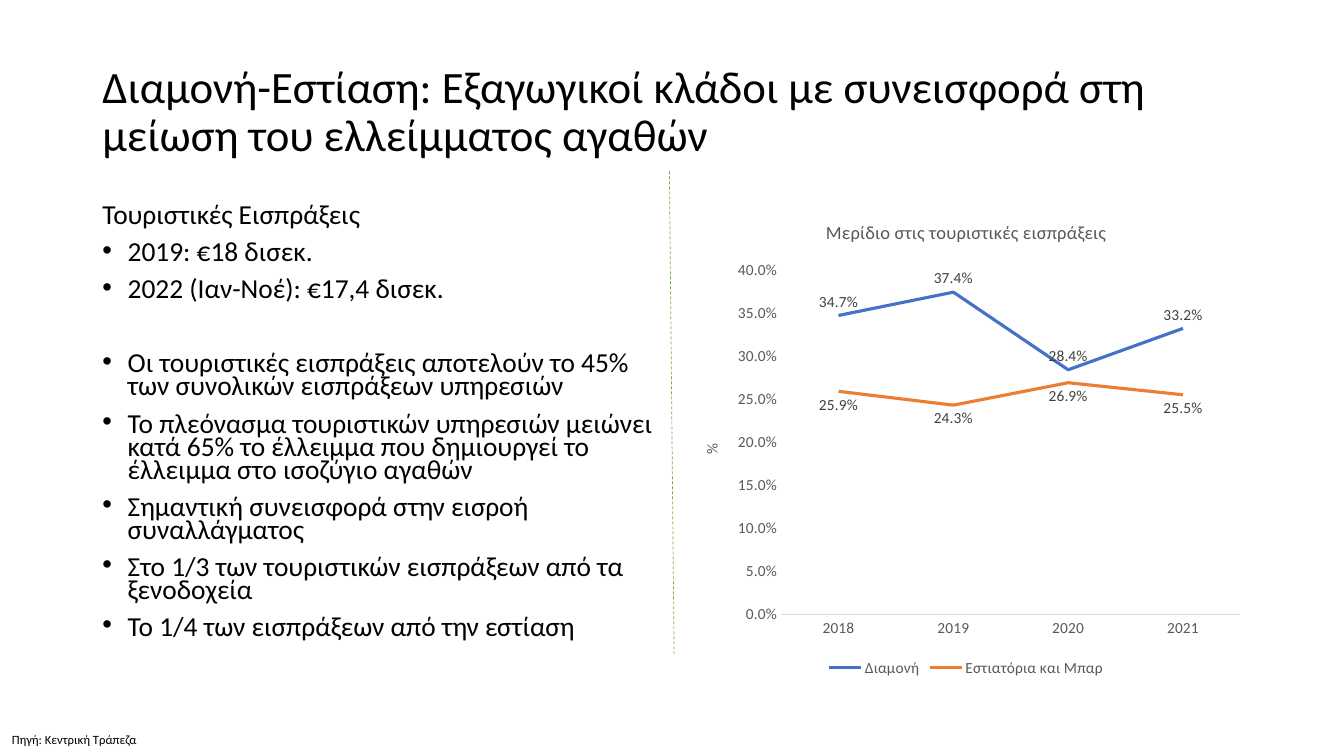
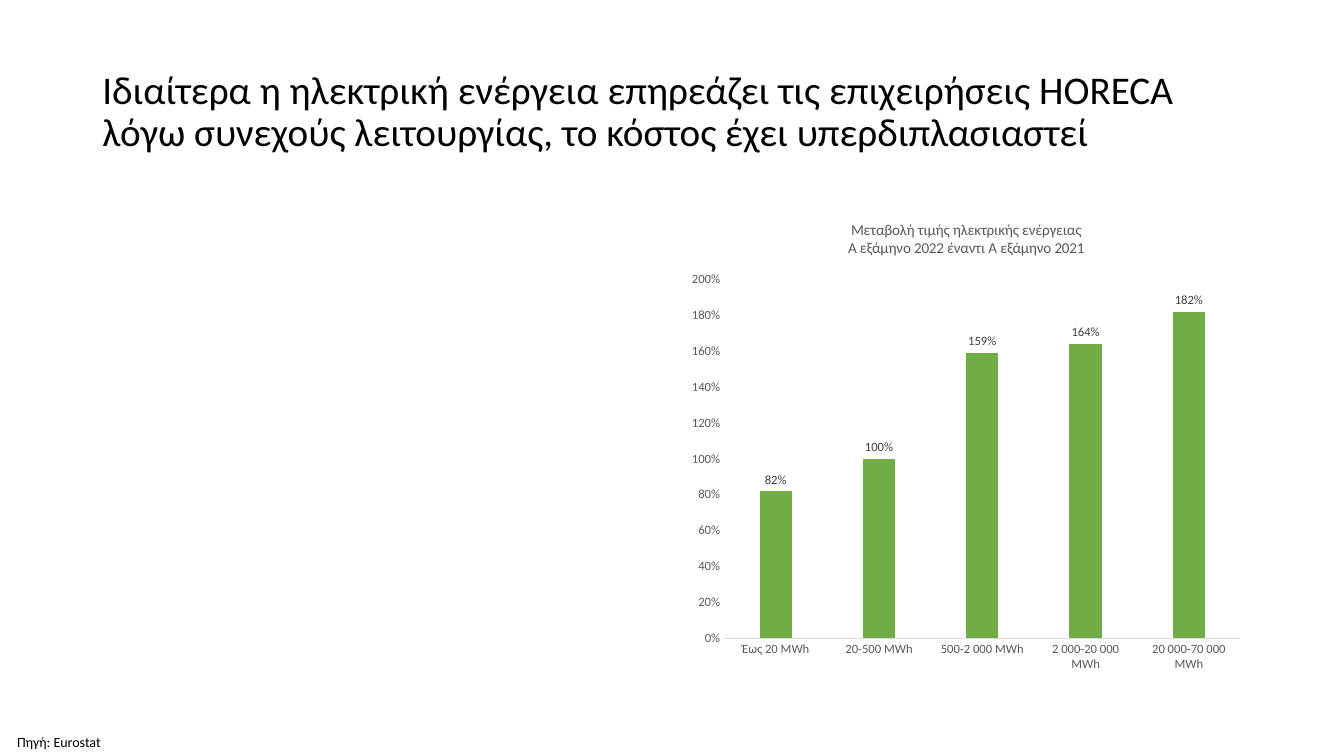
"""Build two slides on tourism receipts and energy costs in accommodation and catering."""
from lxml import etree
from pptx import Presentation
from pptx import util as u
from pptx.chart.data import CategoryChartData
from pptx.dml.color import RGBColor
from pptx.enum import chart as ch, dml, shapes, text
from pptx.oxml import ns

FONT = "Calibri"
BLACK = RGBColor(0x00, 0x00, 0x00)
GREY = RGBColor(0x59, 0x59, 0x59)
DARK = RGBColor(0x40, 0x40, 0x40)
PALE = RGBColor(0xD9, 0xD9, 0xD9)
BLUE = RGBColor(0x44, 0x72, 0xC4)
ORANGE = RGBColor(0xED, 0x7D, 0x31)
GREEN = RGBColor(0x70, 0xAD, 0x47)

TITLE = (2.33, 1.01, 29.21, 3.68)
LEFT = (2.33, 5.08, 14.4, 12.09)
RIGHT = (17.15, 5.08, 14.4, 12.09)


def style(font, size, color):
    font.name = FONT
    font.size = u.Pt(size)
    font.bold = False
    font.color.rgb = color


def write(slide, area, lines, size, spacing=1.0, before=0, anchor=text.MSO_ANCHOR.TOP):
    box = slide.shapes.add_textbox(*[u.Cm(n) for n in area])
    frame = box.text_frame
    frame.word_wrap = True
    frame.vertical_anchor = anchor
    for i, line in enumerate(lines):
        para = frame.paragraphs[0] if i == 0 else frame.add_paragraph()
        para.line_spacing = spacing
        para.space_before = u.Pt(before)
        run = para.add_run()
        run.text = line
        style(run.font, size, BLACK)
    return frame.paragraphs


points = [
    "Τουριστικές Εισπράξεις",
    "2019: €18 δισεκ.",
    "2022 (Ιαν-Νοέ): €17,4 δισεκ.",
    "Οι τουριστικές εισπράξεις αποτελούν το 45% των συνολικών εισπράξεων υπηρεσιών",
    "Το πλεόνασμα τουριστικών υπηρεσιών μειώνει κατά 65% το έλλειμμα που δημιουργεί "
    "το έλλειμμα στο ισοζύγιο αγαθών",
    "Σημαντική συνεισφορά στην εισροή συναλλάγματος",
    "Στο 1/3 των τουριστικών εισπράξεων από τα ξενοδοχεία",
    "Το 1/4 των εισπράξεων από την εστίαση",
]

pages = [
    dict(
        title="Διαμονή-Εστίαση: Εξαγωγικοί κλάδοι με συνεισφορά στη μείωση του ελλείμματος αγαθών",
        size=32,
        source="Πηγή: Κεντρική Τράπεζα", foot=(0.05, 18.31, 15.8, 0.64), small=9,
        kind=ch.XL_CHART_TYPE.LINE, head=["Μερίδιο στις τουριστικές εισπράξεις"],
        font=11, fmt="0.0%", top=0.4, step=0.05,
        cats=["2018", "2019", "2020", "2021"],
        series=[
            ("Διαμονή", [0.347, 0.374, 0.284, 0.332], BLUE, ch.XL_LABEL_POSITION.ABOVE),
            ("Εστιατόρια και Μπαρ", [0.259, 0.243, 0.269, 0.255], ORANGE,
             ch.XL_LABEL_POSITION.BELOW),
        ],
    ),
    dict(
        title="Ιδιαίτερα η ηλεκτρική ενέργεια επηρεάζει τις επιχειρήσεις HORECA "
              "λόγω συνεχούς λειτουργίας, το κόστος έχει υπερδιπλασιαστεί",
        size=28,
        source="Πηγή: Eurostat", foot=(0.18, 18.36, 21.36, 0.69), small=10,
        kind=ch.XL_CHART_TYPE.COLUMN_CLUSTERED,
        head=["Μεταβολή τιμής ηλεκτρικής ενέργειας", "Α εξάμηνο 2022 έναντι Α εξάμηνο 2021"],
        font=9, fmt="0%", top=2, step=0.2,
        cats=["Έως 20 ΜWh", "20-500 MWh", "500-2 000 MWh", "2 000-20 000 MWh",
              "20 000-70 000 MWh"],
        series=[("Series 1", [0.82, 1, 1.59, 1.64, 1.82], GREEN,
                 ch.XL_LABEL_POSITION.OUTSIDE_END)],
    ),
]

deck = Presentation()
deck.slide_width, deck.slide_height = u.Cm(33.87), u.Cm(19.05)

for page in pages:
    slide = deck.slides.add_slide(deck.slide_layouts[6])
    write(slide, TITLE, [page["title"]], page["size"], 0.9, anchor=text.MSO_ANCHOR.MIDDLE)
    write(slide, page["foot"], [page["source"]], page["small"])

    data = CategoryChartData(number_format=page["fmt"])
    data.categories = page["cats"]
    for name, vals, color, spot in page["series"]:
        data.add_series(name, vals)
    frame = slide.shapes.add_chart(page["kind"], *[u.Cm(n) for n in RIGHT], data)
    chart = frame.chart
    size = page["font"]
    style(chart.font, size, GREY)

    chart.has_title = True
    chart.chart_title.include_in_layout = False
    head = chart.chart_title.text_frame
    for i, line in enumerate(page["head"]):
        para = head.paragraphs[0] if i == 0 else head.add_paragraph()
        run = para.add_run()
        run.text = line
        style(run.font, size * 1.2, GREY)

    for axis in (chart.category_axis, chart.value_axis):
        axis.has_major_gridlines = False
        axis.major_tick_mark = axis.minor_tick_mark = ch.XL_TICK_MARK.NONE
        style(axis.tick_labels.font, size, GREY)
    base = chart.category_axis.format.line
    base.color.rgb, base.width = PALE, u.Pt(0.75)
    scale = chart.value_axis
    scale.format.line.fill.background()
    scale.minimum_scale, scale.maximum_scale = 0, page["top"]
    scale.major_unit = page["step"]
    scale.tick_labels.number_format = page["fmt"]
    scale.tick_labels.number_format_is_linked = False

    plot = chart.plots[0]
    plot.vary_by_categories = False
    lined = page["kind"] == ch.XL_CHART_TYPE.LINE
    for item, (name, vals, color, spot) in zip(plot.series, page["series"]):
        if lined:
            item.smooth = False
            item.marker.style = ch.XL_MARKER_STYLE.NONE
            item.format.line.color.rgb = color
            item.format.line.width = u.Pt(2.25)
        else:
            item.format.fill.solid()
            item.format.fill.fore_color.rgb = color
        tags = item.data_labels
        tags.show_value = True
        tags.position = spot
        tags.number_format, tags.number_format_is_linked = page["fmt"], False
        style(tags.font, size, DARK)

    chart.has_legend = lined
    if lined:
        chart.legend.position = ch.XL_LEGEND_POSITION.BOTTOM
        chart.legend.include_in_layout = False
        style(chart.legend.font, size, GREY)
        run = scale.axis_title.text_frame.paragraphs[0].add_run()
        run.text = "%"
        style(run.font, size, GREY)

        paras = write(slide, LEFT, points, 19.6, 0.7, 10)
        paras[3].space_before = u.Pt(36.4)
        for para in paras[1:]:
            props = para._p.get_or_add_pPr()
            props.set("marL", str(u.Cm(0.64)))
            props.set("indent", str(-u.Cm(0.64)))
            etree.SubElement(props, ns.qn("a:buFont")).set("typeface", "Arial")
            etree.SubElement(props, ns.qn("a:buChar")).set("char", "•")

        rule = slide.shapes.add_connector(
            shapes.MSO_CONNECTOR.STRAIGHT, u.Cm(16.87), u.Cm(4.32), u.Cm(16.99), u.Cm(16.54))
        rule.line.color.rgb, rule.line.width = GREEN, u.Pt(0.5)
        rule.line.dash_style = dml.MSO_LINE.DASH
        etree.SubElement(rule._element.spPr, ns.qn("a:effectLst"))
    else:
        plot.gap_width, plot.overlap = 219, -27

deck.save("out.pptx")
